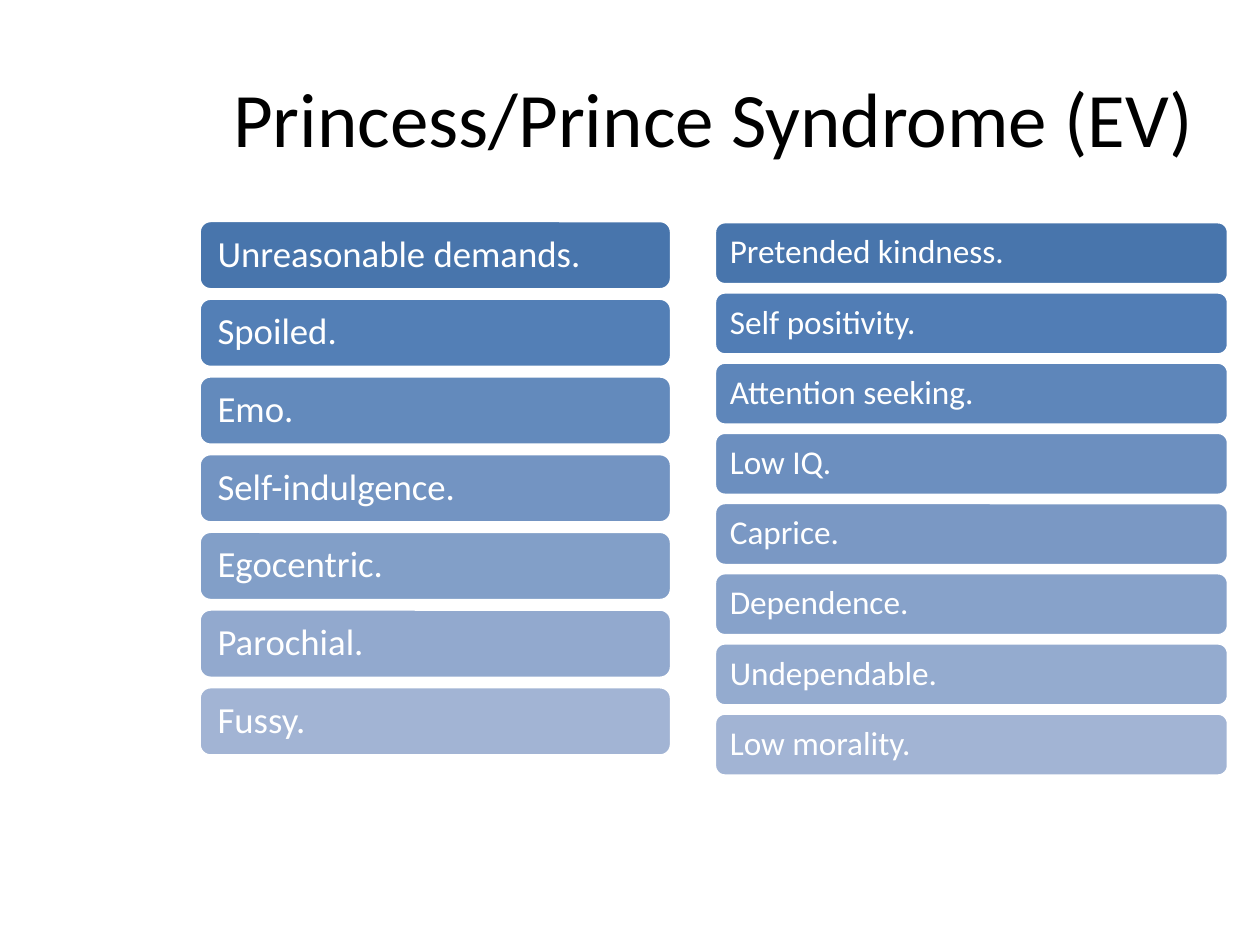
from pptx import Presentation
from pptx.dml.color import RGBColor
from pptx.enum.shapes import MSO_SHAPE
from pptx.enum.text import MSO_ANCHOR, PP_ALIGN
from pptx.util import Inches, Pt


def paint(code):
    return RGBColor.from_string(code)


def blend(start, end, part):
    pairs = [(int(start[i:i + 2], 16), int(end[i:i + 2], 16)) for i in (0, 2, 4)]
    return "".join(f"{round(a + (b - a) * part):02X}" for a, b in pairs)


class Deck:
    """Holds the style and the current slide."""

    font = "Calibri"
    white = "FFFFFF"
    first = "4875AC"
    last = "A2B4D4"

    def __init__(self):
        self.show = Presentation()
        self.show.slide_width = Inches(10)
        self.show.slide_height = Inches(7.5)
        self.slide = self.show.slides.add_slide(self.show.slide_layouts[5])

    def label(self, para, text, size, color):
        run = para.add_run()
        run.text = text
        run.font.name = self.font
        run.font.size = Pt(size)
        run.font.color.rgb = paint(color)

    def title(self, text):
        box = self.slide.shapes.title
        box.left, box.top = Inches(1.58), Inches(0.3)
        box.width, box.height = Inches(8.17), Inches(1.25)
        frame = box.text_frame
        frame.vertical_anchor = MSO_ANCHOR.MIDDLE
        para = frame.paragraphs[0]
        para.alignment = PP_ALIGN.CENTER
        self.label(para, text, 44, "000000")

    def bar(self, group, text, left, top, width, height, fill, size, inset):
        bar = group.shapes.add_shape(
            MSO_SHAPE.ROUNDED_RECTANGLE,
            Inches(left), Inches(top), Inches(width), Inches(height))
        bar.shadow.inherit = False
        bar.fill.solid()
        bar.fill.fore_color.rgb = paint(fill)
        bar.line.color.rgb = paint(self.white)
        bar.line.width = Pt(2)
        frame = bar.text_frame
        frame.word_wrap = True
        frame.vertical_anchor = MSO_ANCHOR.MIDDLE
        frame.margin_left = frame.margin_right = Inches(inset)
        frame.margin_top = frame.margin_bottom = 0
        para = frame.paragraphs[0]
        para.alignment = PP_ALIGN.LEFT
        para.line_spacing = 0.9
        self.label(para, text, size, self.white)

    def stack(self, items, left, top, end, width, height, second, size, inset):
        group = self.slide.shapes.add_group_shape()
        steps = len(items) - 1
        pitch = (end - top) / steps
        for i, text in enumerate(items):
            fill = blend(second, self.last, (i - 1) / (steps - 1)) if i else self.first
            self.bar(group, text, left, top + i * pitch, width, height,
                     fill, size, inset)


def main():
    deck = Deck()
    deck.title("Princess/Prince Syndrome (EV)")
    deck.stack(
        ["Unreasonable demands.", "Spoiled.", "Emo.", "Self-indulgence.",
         "Egocentric.", "Parochial.", "Fussy."],
        left=1.58, top=1.75, end=5.45, width=3.75, height=0.55,
        second="537FB6", size=21, inset=0.12)
    deck.stack(
        ["Pretended kindness.", "Self positivity.", "Attention seeking.",
         "Low IQ.", "Caprice.", "Dependence.", "Undependable.",
         "Low morality."],
        left=5.67, top=1.76, end=5.66, width=4.08, height=0.5,
        second="517DB5", size=19, inset=0.1)
    deck.show.save("out.pptx")


if __name__ == "__main__":
    main()
